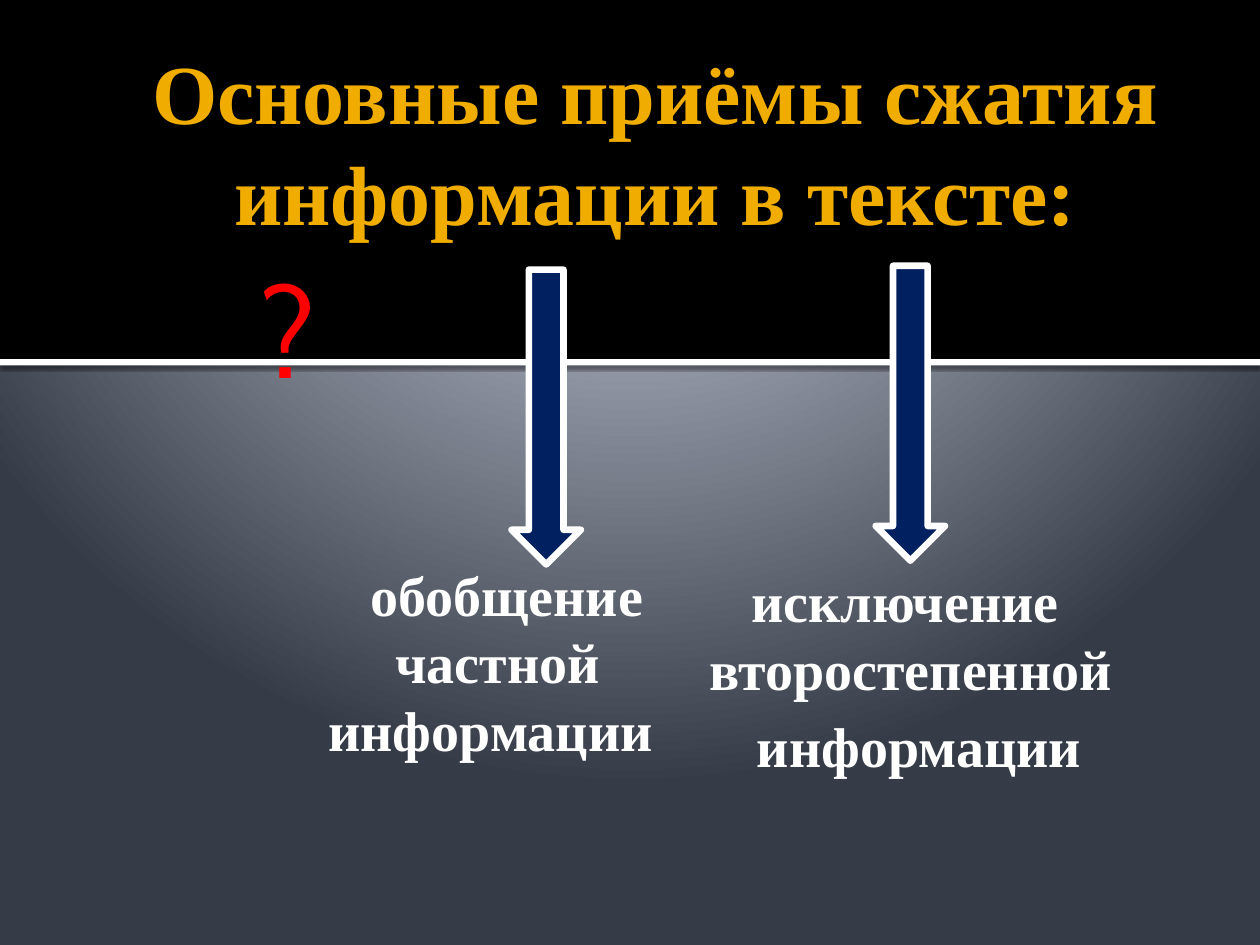
from lxml import etree
from pptx import Presentation
from pptx import util as u
from pptx.dml import color
from pptx.enum import shapes, text
from pptx.oxml import ns, parse_xml

Inches = u.Inches
COLORS = {"black": "000000", "white": "FFFFFF", "gold": "F0AD00", "red": "FF0000",
          "navy": "002060", "mist": "C1C5D3", "haze": "BFC4D2", "slate": "353B47"}
BACKDROP = [(0, "mist"), (12, "mist"), (20, "haze"), (100, "slate")]
SERIF = "Times New Roman"
TITLE = {"size": u.Pt(48), "name": SERIF, "bold": True}
LABEL = {"size": u.Pt(32), "name": SERIF, "bold": True}
QUERY = {"size": u.Pt(72), "name": "Cabin", "bold": False}
BODY_INSETS = (0.16, 0, 0.05, 0)


def rgb(name):
    return color.RGBColor.from_string(COLORS[name])


def set_backdrop(page):
    page.background.fill.solid()
    holder = page.element.xpath(".//p:bgPr")[0]
    stops = "".join(f'<a:gs pos="{at * 1000}"><a:srgbClr val="{COLORS[name]}"/></a:gs>'
                    for at, name in BACKDROP)
    gradient = parse_xml(
        f'<a:gradFill {ns.nsdecls("a")} rotWithShape="1"><a:gsLst>{stops}</a:gsLst>'
        '<a:path path="circle"><a:fillToRect l="10000" t="-25000" r="10000" b="125000"/>'
        '</a:path></a:gradFill>')
    holder.replace(holder[0], gradient)


def add_block(page, kind, box, fill):
    block = page.shapes.add_shape(kind, *map(Inches, box))
    block.shadow.inherit = False
    block.fill.solid()
    block.fill.fore_color.rgb = rgb(fill)
    block.line.fill.background()
    return block


def add_header(page, left, top, width, height, rule):
    add_block(page, shapes.MSO_SHAPE.RECTANGLE, (left, top, width, height), "black")
    line = add_block(page, shapes.MSO_SHAPE.RECTANGLE,
                     (left, top + height, width, rule), "white")
    effects = line.element.spPr.find(ns.qn("a:effectLst"))
    effects.append(parse_xml(
        f'<a:outerShdw {ns.nsdecls("a")} blurRad="{u.Pt(2.5)}" dist="{u.Pt(0.8)}" '
        f'dir="5400000"><a:srgbClr val="{COLORS["black"]}"><a:alpha val="60000"/>'
        '</a:srgbClr></a:outerShdw>'))


def add_arrow(page, box):
    arrow = add_block(page, shapes.MSO_SHAPE.DOWN_ARROW, box, "navy")
    arrow.line.color.rgb = rgb("white")
    arrow.line.width = u.Pt(3.78)
    etree.SubElement(arrow.line._get_or_add_ln(), ns.qn("a:round"))


def add_text(page, box, lines, font, fill, insets=(0.1, 0.05, 0.1, 0.05), margin=0,
             before=0, align=text.PP_ALIGN.CENTER, anchor=text.MSO_ANCHOR.TOP):
    frame = page.shapes.add_textbox(*map(Inches, box)).text_frame
    settings = dict(zip(("margin_left", "margin_top", "margin_right", "margin_bottom"),
                        map(Inches, insets)), word_wrap=True, vertical_anchor=anchor)
    for key, value in settings.items():
        setattr(frame, key, value)
    for number, (words, indent) in enumerate(lines):
        para = frame.add_paragraph() if number else frame.paragraphs[0]
        para.alignment = align
        para.space_before = u.Pt(before)
        layout = para._p.get_or_add_pPr()
        layout.set("marL", str(Inches(margin)))
        layout.set("indent", str(Inches(indent)))
        span = para.add_run()
        span.text = words
        for key, value in font.items():
            setattr(span.font, key, value)
        span.font.color.rgb = rgb(fill)


def build_slide(deck):
    page = deck.slides.add_slide(deck.slide_layouts[6])
    set_backdrop(page)
    add_header(page, 0, 0, 10, 2.85, 0.05)
    add_text(page, (0.82, 0.13, 8.76, 1.79),
             [("Основные приёмы сжатия информации в тексте:", 0)], TITLE, "gold",
             insets=(0.1, 0, 0.1, 0), anchor=text.MSO_ANCHOR.BOTTOM)
    add_text(page, (0.81, 2, 8.77, 0.75), [("?", 0)], QUERY, "red",
             insets=BODY_INSETS, margin=1.1, align=text.PP_ALIGN.LEFT)
    for left, top in ((4.06, 2.14), (6.95, 2.11)):
        add_arrow(page, (left, top, 0.55, 2.34))
    add_text(page, (2.24, 4.45, 3.31, 2.38), [("обобщение частной информации ", 0.14)],
             LABEL, "white", insets=BODY_INSETS)
    add_text(page, (5, 4.45, 4.06, 2.38),
             [("исключение второстепенной", -0.09), ("информации", 0.13)],
             LABEL, "white", margin=0.4, before=6)


def main():
    deck = Presentation()
    deck.slide_width, deck.slide_height = Inches(10), Inches(7.5)
    build_slide(deck)
    deck.save("out.pptx")


if __name__ == "__main__":
    main()
